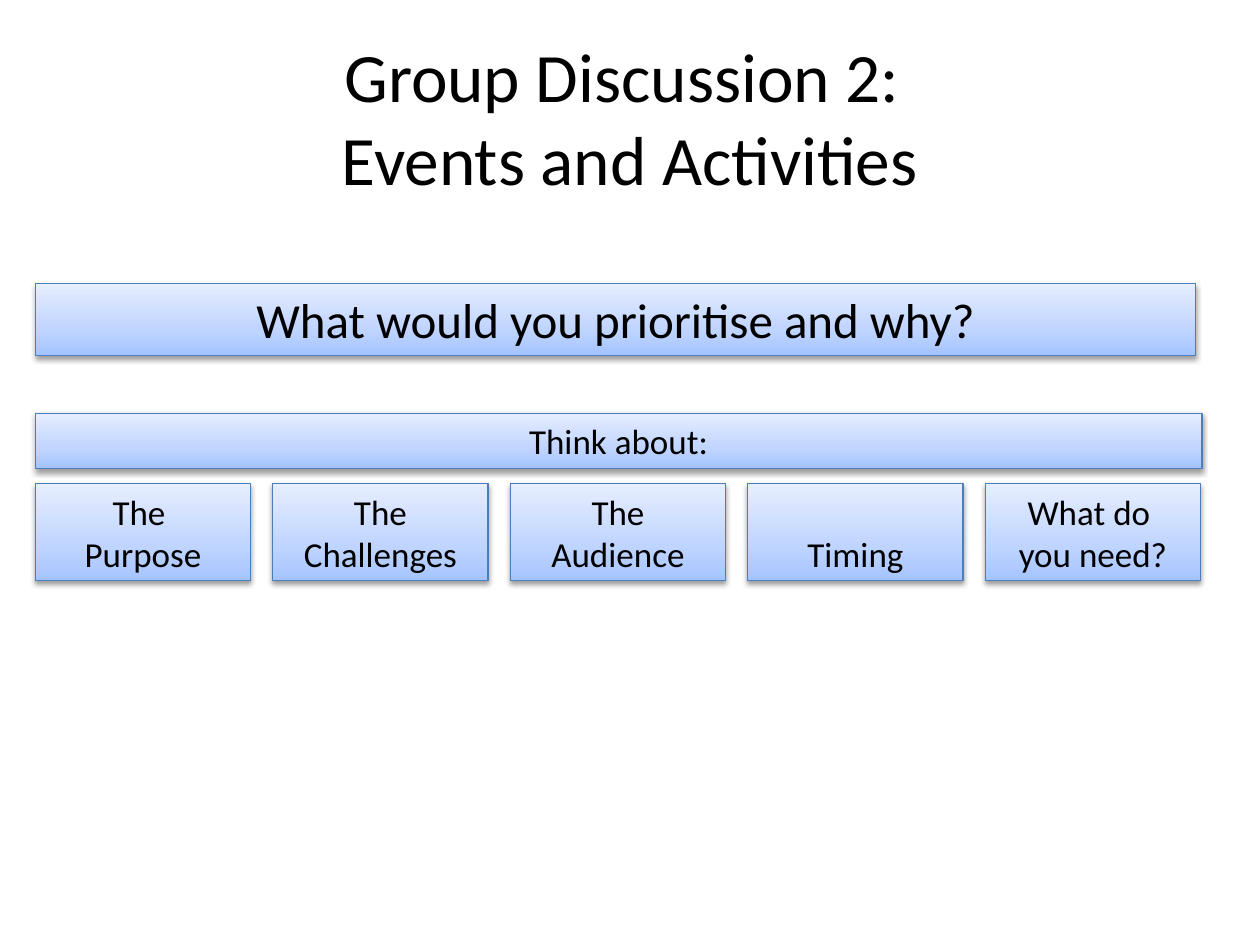
from copy import deepcopy

from lxml.etree import SubElement
from pptx import Presentation
from pptx.dml.color import RGBColor
from pptx.enum.shapes import MSO_SHAPE
from pptx.enum.text import MSO_ANCHOR, PP_ALIGN
from pptx.oxml.ns import qn
from pptx.util import Pt

COLORS = {
    "text": "000000",
    "outline": "4B7EBC",
    "shadow": "000000",
    "bottom": "A4C4FF",
    "middle": "BFD4FF",
    "top": "E6EEFF",
}
FONT = "Calibri"
LEFT = 20.16
TOPICS = ["The \nPurpose", "The Challenges", "The Audience", "Timing", "What do \nyou need?"]
TOPIC_WIDTH = 123.12
TOPIC_STEP = 135.7


def color(name):
    return RGBColor.from_string(COLORS[name])


def format_text(frame, size):
    for para in frame.paragraphs:
        para.alignment = PP_ALIGN.CENTER
        for span in para.runs:
            span.font.name = FONT
            span.font.size = Pt(size)
            span.font.color.rgb = color("text")


def add_title(page, text):
    title = page.shapes.title
    title.left, title.top, title.width, title.height = Pt(36), Pt(21.6), Pt(648), Pt(90)
    title.text_frame.text = text
    title.text_frame.vertical_anchor = MSO_ANCHOR.MIDDLE
    format_text(title.text_frame, 39.6)


def fill_gradient(shape):
    shape.fill.gradient()
    shape.fill.gradient_angle = 90
    stop_list = shape._element.spPr.find(".//" + qn("a:gsLst"))
    stop_list.append(deepcopy(stop_list[-1]))
    steps = [("bottom", 0), ("middle", 0.35), ("top", 1)]
    for stop, (name, position) in zip(shape.fill.gradient_stops, steps):
        stop.color.rgb = color(name)
        stop.position = position


def add_shadow(shape):
    shape.shadow.inherit = False
    effects = shape._element.spPr.find(qn("a:effectLst"))
    shadow = SubElement(effects, qn("a:outerShdw"), blurRad=str(Pt(3.1)),
                        dist=str(Pt(1.6)), dir="5400000", rotWithShape="0")
    tint = SubElement(shadow, qn("a:srgbClr"), val=COLORS["shadow"])
    SubElement(tint, qn("a:alpha"), val="38000")


def add_panel(page, text, left, top, width, height, size=20, anchor=MSO_ANCHOR.TOP):
    panel = page.shapes.add_shape(MSO_SHAPE.RECTANGLE, Pt(left), Pt(top), Pt(width), Pt(height))
    fill_gradient(panel)
    panel.line.color.rgb = color("outline")
    panel.line.width = Pt(0.75)
    add_shadow(panel)
    frame = panel.text_frame
    frame.word_wrap = True
    frame.vertical_anchor = anchor
    frame.text = text
    format_text(frame, size)


def main():
    deck = Presentation()
    deck.slide_width, deck.slide_height = Pt(720), Pt(540)
    page = deck.slides.add_slide(deck.slide_layouts[5])
    add_title(page, "Group Discussion 2: \vEvents and Activities")
    add_panel(page, "What would you prioritise and why?", LEFT, 162, 663.12, 41.04, size=28)
    for index, topic in enumerate(TOPICS):
        anchor = MSO_ANCHOR.BOTTOM if topic == "Timing" else MSO_ANCHOR.TOP
        add_panel(page, topic, LEFT + index * TOPIC_STEP, 276.48, TOPIC_WIDTH, 55.44,
                  anchor=anchor)
    add_panel(page, "Think about:", LEFT, 236.16, 666.72, 31.68)
    deck.save("out.pptx")


if __name__ == "__main__":
    main()
